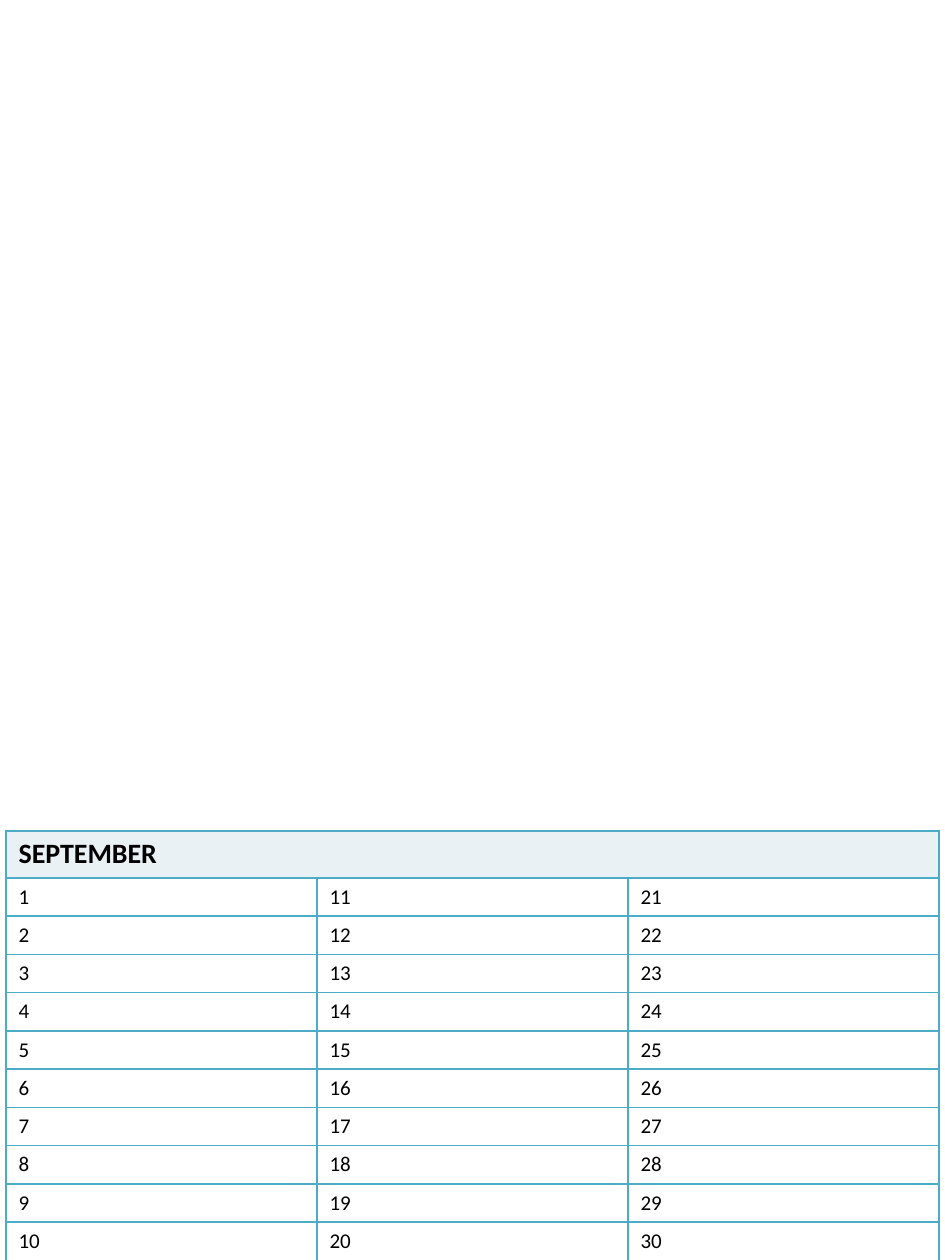
"""Build a page with a three-column September day table."""
from lxml import etree
from pptx import Presentation
from pptx.dml.color import RGBColor
from pptx.oxml.ns import qn
from pptx.util import Pt

MONTH = "SEPTEMBER"
DAYS = list(range(1, 31))
COLUMNS = 3
ROWS = len(DAYS) // COLUMNS

PX = 914400 // 126
PAGE_WIDTH, PAGE_HEIGHT = 945, 1260
LEFT, TOP, COLUMN_WIDTH = 6, 831, 311
HEADER_HEIGHT, DAY_HEIGHT = 47, 38
FONT = "Calibri"
BORDER_WIDTH = Pt(1)
COLORS = {"border": "4BACC6", "header": "E9F1F5", "day": "FFFFFF", "text": "000000"}


def add_borders(cell):
    properties = cell._tc.get_or_add_tcPr()
    for side in ("lnL", "lnR", "lnT", "lnB"):
        line = etree.SubElement(properties, qn(f"a:{side}"), w=str(BORDER_WIDTH))
        fill = etree.SubElement(line, qn("a:solidFill"))
        etree.SubElement(fill, qn("a:srgbClr"), val=COLORS["border"])


def style_cell(cell, color, size, bold):
    add_borders(cell)
    cell.fill.solid()
    cell.fill.fore_color.rgb = RGBColor.from_string(color)
    for paragraph in cell.text_frame.paragraphs:
        font = paragraph.font
        for span in [paragraph, *paragraph.runs]:
            font = span.font
            font.name = FONT
            font.size = Pt(size)
            font.bold = bold
            font.color.rgb = RGBColor.from_string(COLORS["text"])


def main():
    deck = Presentation()
    deck.slide_width = PAGE_WIDTH * PX
    deck.slide_height = PAGE_HEIGHT * PX
    page = deck.slides.add_slide(deck.slide_layouts[6])

    height = HEADER_HEIGHT + ROWS * DAY_HEIGHT
    table = page.shapes.add_table(
        ROWS + 1, COLUMNS, LEFT * PX, TOP * PX, COLUMNS * COLUMN_WIDTH * PX, height * PX
    ).table
    table.first_row = False
    table.horz_banding = False
    for column in table.columns:
        column.width = COLUMN_WIDTH * PX
    for index, row in enumerate(table.rows):
        row.height = (DAY_HEIGHT if index else HEADER_HEIGHT) * PX

    table.cell(0, 0).merge(table.cell(0, COLUMNS - 1))
    table.cell(0, 0).text_frame.text = MONTH
    for column in range(COLUMNS):
        style_cell(table.cell(0, column), COLORS["header"], 16, True)
    for index, day in enumerate(DAYS):
        column, row = divmod(index, ROWS)
        cell = table.cell(row + 1, column)
        cell.text_frame.text = str(day)
        style_cell(cell, COLORS["day"], 12, False)

    deck.save("out.pptx")


if __name__ == "__main__":
    main()
